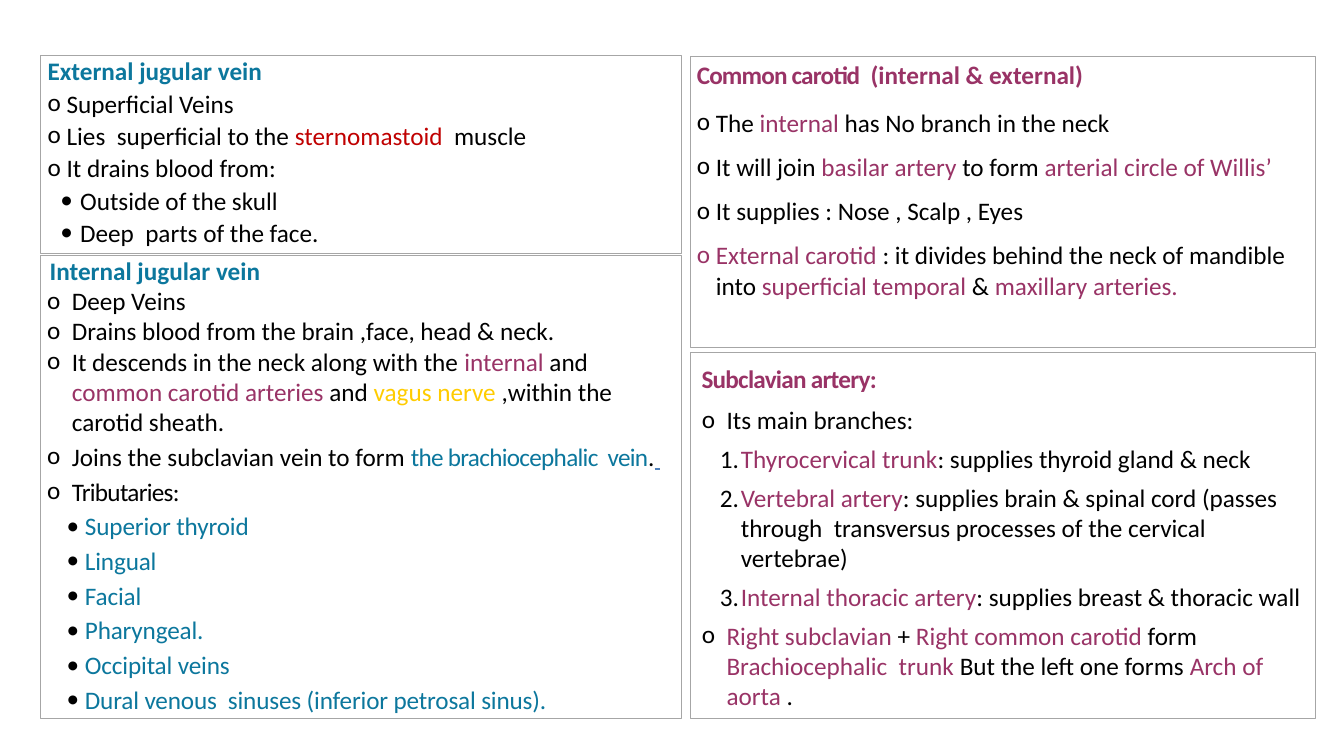
from lxml import etree
from pptx import Presentation
from pptx.dml.color import RGBColor
from pptx.enum.text import MSO_ANCHOR, MSO_AUTO_SIZE, PP_ALIGN
from pptx.oxml.ns import qn
from pptx.util import Cm, Pt

TOP = MSO_ANCHOR.TOP
NO_FIT = MSO_AUTO_SIZE.NONE
LEFT = PP_ALIGN.LEFT
COMPARISON = 4

BLACK, BLUE, PURPLE = "000000", "0C779D", "993366"
RED, YELLOW, STEEL, GREY = "C00000", "FFCC00", "4F81BC", "A6A6A6"
NUMBER = "1."


def rgb(hex_colour):
    return RGBColor.from_string(hex_colour)


class VesselSlide:
    font, size = "Calibri", Pt(18)

    def __init__(self, prs):
        self.slide = prs.slides.add_slide(prs.slide_layouts[COMPARISON])
        title = self.slide.shapes.title
        title.element.getparent().remove(title.element)
        self.bodies = iter(self.slide.placeholders)

    def panel(self, left, top, width, height, inset=(0, 0)):
        """Frame the next body placeholder and return its text frame."""
        body = next(self.bodies)
        body.left, body.top, body.width, body.height = map(Cm, (left, top, width, height))
        body.line.color.rgb = rgb(GREY)
        body.line.width = Pt(0.75)
        frame = body.text_frame
        frame.word_wrap, frame.auto_size, frame.vertical_anchor = True, NO_FIT, TOP
        frame.margin_left = frame.margin_right = Cm(inset[0])
        frame.margin_top = frame.margin_bottom = Cm(inset[1])
        return frame

    def bullet(self, paragraph, mark, colour, indent, hang):
        props = paragraph._p.get_or_add_pPr()
        props.set("marL", str(Cm(indent)))
        props.set("indent", str(-Cm(hang)))
        if not mark:
            etree.SubElement(props, qn("a:buNone"))
            return
        tint = etree.SubElement(props, qn("a:buClr"))
        etree.SubElement(tint, qn("a:srgbClr"), val=colour)
        etree.SubElement(props, qn("a:buFont"), typeface=self.font)
        if mark == NUMBER:
            etree.SubElement(props, qn("a:buAutoNum"), type="arabicPeriod")
        else:
            etree.SubElement(props, qn("a:buChar"), char=mark)

    def line(self, frame, runs, mark=None, indent=0, hang=0, before=0,
             spacing=1.0, bold=False, mark_colour=BLACK):
        """Add a paragraph; each run is (text, colour) or (text, colour, tracking)."""
        first = frame.paragraphs[0]
        paragraph = frame.add_paragraph() if first.runs else first
        paragraph.alignment = LEFT
        paragraph.line_spacing = spacing
        paragraph.space_before, paragraph.space_after = Pt(before), Pt(0)
        self.bullet(paragraph, mark, mark_colour, indent, hang)
        font = paragraph.font
        font.name, font.size, font.bold = self.font, self.size, bold
        for text, colour, *tracking in runs:
            run = paragraph.add_run()
            run.text = text
            run.font.color.rgb = rgb(colour)
            if tracking:
                run._r.get_or_add_rPr().set("spc", str(tracking[0]))
            if colour == STEEL:
                run.font.underline = True


def external_jugular(page):
    frame = page.panel(1.02, 1.4, 16.15, 4.98)
    page.line(frame, [("External jugular vein", BLUE)], indent=0.66, hang=0.48,
              before=1.5, bold=True)
    for runs in (
        [("Superficial Veins", BLACK)],
        [("Lies  superficial to the ", BLACK), ("sternomastoid", RED), ("  muscle", BLACK)],
        [("It drains blood from:", BLACK)],
    ):
        page.line(frame, runs, "o", 0.66, 0.48, 1.5)
    for source in ("Outside of the skull", "Deep  parts of the face."):
        page.line(frame, [(source, BLACK)], "•", 1.0, 0.5, 1.5)


def internal_jugular(page):
    frame = page.panel(1.02, 6.43, 16.15, 11.68)
    page.line(frame, [("Internal jugular vein", BLUE)], indent=0.23, bold=True)
    for runs in (
        [("Deep Veins", BLACK)],
        [("Drains blood from the brain ,face, head & neck.", BLACK)],
        [("It descends in the neck along with the ", BLACK), ("internal ", PURPLE),
         ("and  ", BLACK), ("common carotid arteries ", PURPLE), ("and ", BLACK),
         ("vagus nerve", YELLOW), (" ,within the  carotid sheath.", BLACK)],
    ):
        page.line(frame, runs, "o", 0.79, 0.62)
    for runs in (
        [("Joins the subclavian vein to form ", BLACK),
         ("the brachiocephalic  vein", BLUE, -50), (".", BLACK, -40), (" ", STEEL, -90)],
        [("Tributaries:", BLACK, -50)],
    ):
        page.line(frame, runs, "o", 0.79, 0.62, 0.8, Pt(24))
    for tributary in ("Superior thyroid", "Lingual", "Facial", "Pharyngeal.",
                      "Occipital veins",
                      "Dural venous  sinuses (inferior petrosal sinus)."):
        page.line(frame, [(tributary, BLUE, -10)], "•", 1.12, 0.46, 0.8, Pt(24))


def common_carotid(page):
    frame = page.panel(17.4, 1.42, 15.75, 7.34)
    page.line(frame, [("Common carotid ", PURPLE, -60), (" (internal & external)", PURPLE)],
              indent=0.64, hang=0.48, before=10, spacing=Pt(23.9), bold=True)
    page.line(frame, [("The ", BLACK), ("internal", PURPLE),
                      (" has No branch in the neck", BLACK)],
              "o", 0.64, 0.48, 10, Pt(23.9))
    for runs in (
        [("It will join ", BLACK), ("basilar artery ", PURPLE), ("to form ", BLACK),
         ("arterial circle of Willis’", PURPLE)],
        [("It supplies : Nose , Scalp , Eyes", BLACK)],
        [("External carotid ", PURPLE),
         (": it divides behind the neck of mandible into ", BLACK),
         ("superficial temporal ", PURPLE), ("& ", BLACK), ("maxillary arteries.", PURPLE)],
    ):
        first_colour = runs[0][1]
        page.line(frame, runs, "o", 0.64, 0.48, 10, mark_colour=first_colour)


def subclavian(page):
    frame = page.panel(17.4, 8.89, 15.75, 9.22, inset=(0.25, 0.13))
    page.line(frame, [("Subclavian artery:", PURPLE, -55)], indent=0.03, before=6,
              spacing=Pt(25.1), bold=True)
    page.line(frame, [("Its main branches:", BLACK)], "o", 0.66, 0.62, 6, Pt(23.9))
    for branch, supply in (
        ("Thyrocervical trunk", ": supplies thyroid gland & neck"),
        ("Vertebral artery", ": supplies brain & spinal cord (passes through  "
                             "transversus processes of the cervical vertebrae)"),
        ("Internal thoracic artery", ": supplies breast & thoracic wall"),
    ):
        page.line(frame, [(branch, PURPLE), (supply, BLACK)], NUMBER, 1.02, 0.53, 6)
    page.line(frame, [("Right subclavian ", PURPLE), ("+ ", BLACK),
                      ("Right common carotid ", PURPLE), ("form ", BLACK),
                      ("Brachiocephalic  trunk", PURPLE),
                      (" But the left one forms ", BLACK),
                      ("Arch of aorta ", PURPLE), (".", BLACK)],
              "o", 0.66, 0.62, 6)


def main():
    prs = Presentation()
    prs.slide_width, prs.slide_height = Cm(33.87), Cm(19.05)
    page = VesselSlide(prs)
    external_jugular(page)
    internal_jugular(page)
    common_carotid(page)
    subclavian(page)
    prs.save("out.pptx")


if __name__ == "__main__":
    main()
